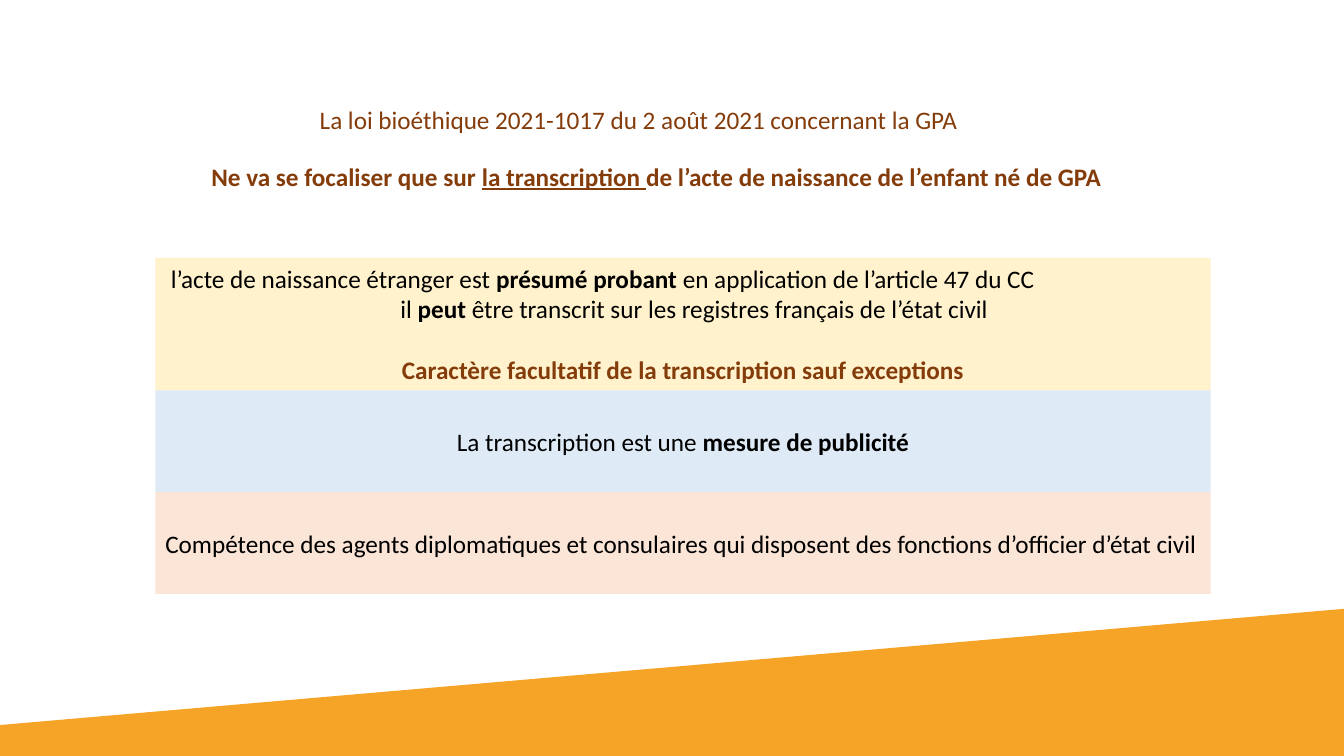
from pptx import Presentation
from pptx.dml.color import RGBColor
from pptx.enum.shapes import MSO_SHAPE
from pptx.enum.text import MSO_ANCHOR, PP_ALIGN
from pptx.util import Pt

ORANGE = RGBColor(0xF5, 0xA4, 0x27)
BROWN = RGBColor(0x84, 0x3C, 0x0B)
BLACK = RGBColor(0, 0, 0)
CREAM = RGBColor(0xFF, 0xF2, 0xCC)
PALE_BLUE = RGBColor(0xDE, 0xEB, 0xF7)
PALE_PEACH = RGBColor(0xFB, 0xE5, 0xD6)


def write_line(paragraph, pieces, color=BLACK, bold=None, align=PP_ALIGN.CENTER, indent=0):
    """Fill a paragraph with (text, bold, underline) pieces."""
    paragraph.alignment = align
    if indent:
        paragraph._p.get_or_add_pPr().set("marL", str(Pt(indent)))
    font = paragraph.font
    font.name, font.size, font.bold = "Calibri", Pt(18), bold
    font.color.rgb = color
    for text, strong, underlined in pieces:
        run = paragraph.add_run()
        run.text = text
        if strong:
            run.font.bold = True
        if underlined:
            run.font.underline = True


def add_filled(slide, kind, left, top, width, height, color):
    """Add a flat filled shape without outline or shadow."""
    shape = slide.shapes.add_shape(kind, Pt(left), Pt(top), Pt(width), Pt(height))
    shape.shadow.inherit = False
    shape.fill.solid()
    shape.fill.fore_color.rgb = color
    shape.line.fill.background()
    return shape


def add_footer(slide, left, top, width, height, base_height):
    """Draw the orange slope rising to the right above its base strip."""
    slope_height = height - base_height
    slope = add_filled(slide, MSO_SHAPE.RIGHT_TRIANGLE, left, top, width, slope_height, ORANGE)
    slope._element.spPr.xfrm.set("flipH", "1")
    base = add_filled(slide, MSO_SHAPE.RECTANGLE, left, top + slope_height,
                      width, base_height, ORANGE)
    for part in (slope, base):
        part.line.color.rgb = ORANGE
        part.line.width = Pt(1)


def add_heading(slide, left, top, width, height, pieces, bold=None):
    """Add one centred brown heading line."""
    heading = slide.shapes.add_textbox(Pt(left), Pt(top), Pt(width), Pt(height))
    heading.text_frame.word_wrap = True
    write_line(heading.text_frame.paragraphs[0], pieces, BROWN, bold)


def add_band(slide, left, top, width, height, color):
    """Add a coloured band and return its text frame."""
    band = add_filled(slide, MSO_SHAPE.RECTANGLE, left, top, width, height, color)
    frame = band.text_frame
    frame.word_wrap = True
    frame.vertical_anchor = MSO_ANCHOR.MIDDLE
    return frame


def add_statements(slide, left, top, width, presumption_height, band_height):
    """Stack the three bands on the transcription."""
    presumption = add_band(slide, left, top, width, presumption_height, CREAM)
    presumption.vertical_anchor = MSO_ANCHOR.TOP
    write_line(presumption.paragraphs[0],
               [("l’acte de naissance étranger est ", False, False),
                ("présumé probant", True, False),
                (" en application de l’article 47 du CC", False, False)],
               align=PP_ALIGN.LEFT, indent=4)
    write_line(presumption.add_paragraph(),
               [("il ", False, False), ("peut", True, False),
                (" être transcrit sur les registres français de l’état civil", False, False)],
               indent=16)
    optional = presumption.add_paragraph()
    optional.space_before = Pt(22)
    write_line(optional, [("Caractère facultatif de la transcription sauf exceptions",
                           False, False)], BROWN, True)

    top += presumption_height
    publicity = add_band(slide, left, top, width, band_height, PALE_BLUE)
    write_line(publicity.paragraphs[0], [("La transcription est une ", False, False),
                                         ("mesure de publicité", True, False)])

    competence = add_band(slide, left, top + band_height, width, band_height, PALE_PEACH)
    write_line(competence.paragraphs[0],
               [("Compétence des agents diplomatiques et consulaires qui disposent "
                 "des fonctions d’officier d’état civil", False, False)],
               align=PP_ALIGN.LEFT)


def main():
    """Build the slide and save it."""
    deck = Presentation()
    deck.slide_width, deck.slide_height = Pt(960), Pt(540)
    slide = deck.slides.add_slide(deck.slide_layouts[6])
    add_footer(slide, 0, 435.4, 960, 104.6, 21.6)
    add_heading(slide, 101, 70.8, 710.6, 29,
                [("La loi bioéthique 2021-1017 du 2 août 2021 concernant la GPA", False, False)])
    add_heading(slide, 101, 111.6, 735.8, 29,
                [("Ne va se focaliser que sur ", False, False),
                 ("la transcription ", False, True),
                 ("de l’acte de naissance de l’enfant né de GPA", False, False)], bold=True)
    add_statements(slide, 111, 184.3, 753.8, 94.5, 72.7)
    deck.save("out.pptx")


if __name__ == "__main__":
    main()
